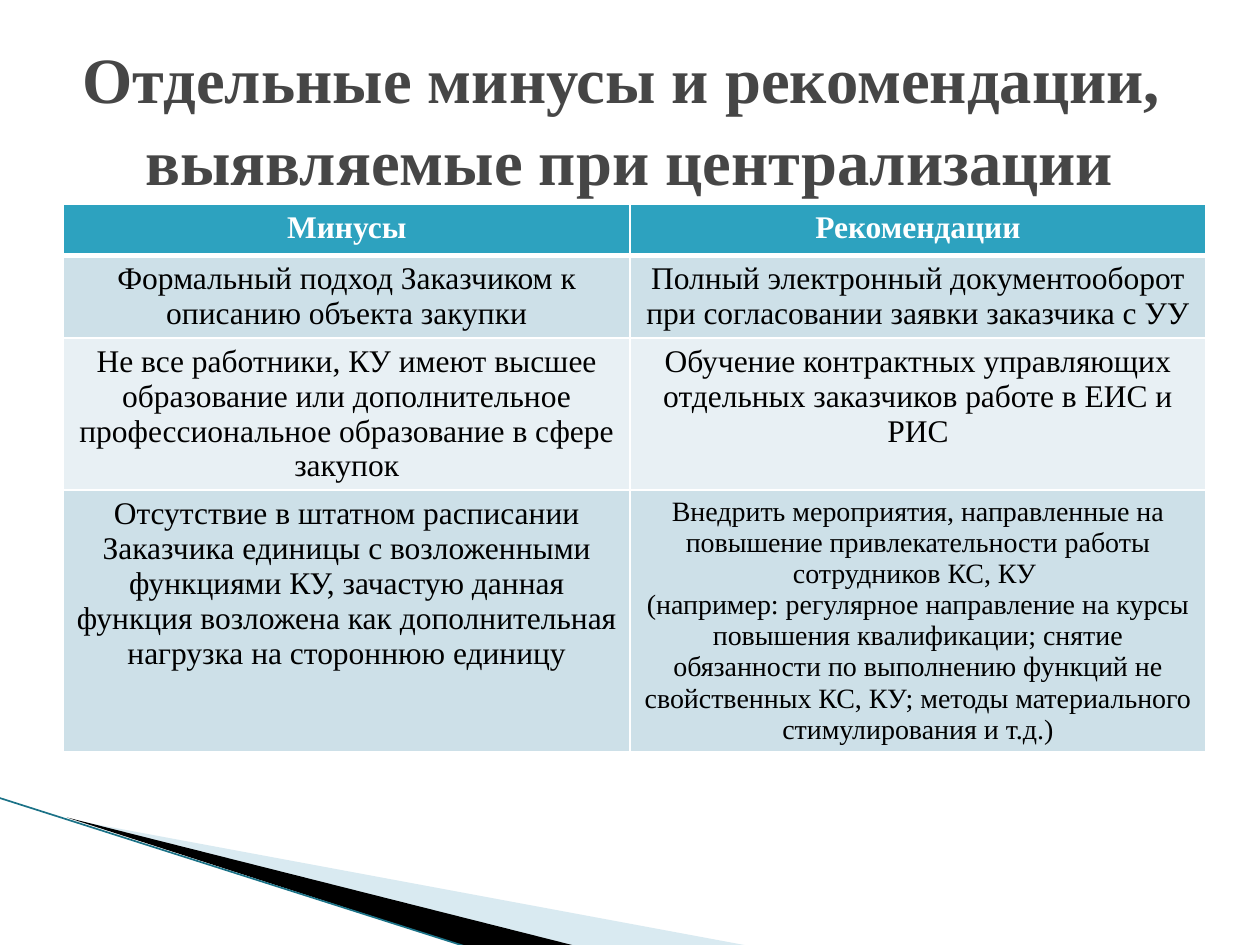
from dataclasses import dataclass

from lxml import etree
from pptx import Presentation
from pptx.dml.color import RGBColor
from pptx.enum.shapes import MSO_CONNECTOR
from pptx.enum.text import MSO_ANCHOR, PP_ALIGN
from pptx.oxml.ns import qn
from pptx.util import Cm, Pt

CENTER = PP_ALIGN.CENTER
MIDDLE = MSO_ANCHOR.MIDDLE
STRAIGHT = MSO_CONNECTOR.STRAIGHT

FONT = "Times New Roman"
COLORS = {
    "title": "464646",
    "header": "2DA2BF",
    "odd_row": "CDE0E8",
    "even_row": "E8F0F4",
    "white": "FFFFFF",
    "black": "000000",
    "wedge": "A0CBDC",
    "edge": "1B7287",
}


@dataclass
class Wedge:
    points: list[tuple[float, float]]
    color: str
    opacity: int = 100


@dataclass
class TextStyle:
    size: float
    color: str
    bold: bool = False


@dataclass
class Row:
    height: float
    fill: str
    texts: tuple[str, str]
    styles: tuple[TextStyle, TextStyle]


TITLE = TextStyle(36.9, "title", True)
HEADER = TextStyle(18, "white", True)
BODY = TextStyle(18, "black")
SMALL = TextStyle(16, "black")

WEDGES = [
    Wedge([(1.4, 16.52), (15.11, 19.07), (11.58, 19.07)], "wedge", 40),
    Wedge([(1.35, 16.48), (11.61, 19.07), (9.45, 19.1)], "black"),
]

COLUMN_WIDTHS = (11.42, 11.61)
ROWS = [
    Row(1.03, "header", ("Минусы", "Рекомендации"), (HEADER, HEADER)),
    Row(1.65, "odd_row", (
        "Формальный подход Заказчиком к описанию объекта закупки",
        "Полный электронный документооборот при согласовании заявки заказчика с УУ",
    ), (BODY, BODY)),
    Row(3.07, "even_row", (
        "Не все работники, КУ имеют высшее образование или дополнительное "
        "профессиональное образование в сфере закупок",
        "Обучение контрактных управляющих отдельных заказчиков работе в ЕИС и РИС",
    ), (BODY, BODY)),
    Row(5.26, "odd_row", (
        "Отсутствие в штатном расписании Заказчика единицы с возложенными функциями КУ, "
        "зачастую данная функция возложена как дополнительная нагрузка на стороннюю единицу",
        "Внедрить мероприятия, направленные на повышение привлекательности работы "
        "сотрудников КС, КУ \n(например: регулярное направление на курсы повышения "
        "квалификации; снятие обязанности по выполнению функций не свойственных КС, КУ; "
        "методы материального стимулирования и т.д.)",
    ), (BODY, SMALL)),
]


def rgb(name: str) -> RGBColor:
    return RGBColor.from_string(COLORS[name])


def write_text(para, text: str, style: TextStyle) -> None:
    """Fill a centred paragraph, turning each newline into a line break."""
    para.alignment = CENTER
    for index, line in enumerate(text.split("\n")):
        if index:
            para.add_line_break()
        span = para.add_run()
        span.text = line
        span.font.name = FONT
        span.font.size = Pt(style.size)
        span.font.bold = style.bold
        span.font.color.rgb = rgb(style.color)


def draw_wedge(page, wedge: Wedge) -> None:
    points = [(Cm(x), Cm(y)) for x, y in wedge.points]
    builder = page.shapes.build_freeform(*points[0], scale=1.0)
    builder.add_line_segments(points[1:], close=True)
    shape = builder.convert_to_shape()
    shape.shadow.inherit = False
    shape.line.fill.background()
    shape.fill.solid()
    shape.fill.fore_color.rgb = rgb(wedge.color)
    if wedge.opacity < 100:
        color = shape.fill._xPr.find(qn("a:solidFill"))[0]
        etree.SubElement(color, qn("a:alpha"), val=str(wedge.opacity * 1000))


def draw_edge(page) -> None:
    edge = page.shapes.add_connector(STRAIGHT, Cm(-0.03), Cm(16.08), Cm(9.45), Cm(19.1))
    edge.line.color.rgb = rgb("edge")
    edge.line.width = Pt(0.95)
    etree.SubElement(edge._element.spPr, qn("a:effectLst"))


def set_borders(cell, top: float, bottom: float) -> None:
    properties = cell._tc.get_or_add_tcPr()
    widths = {"a:lnL": 1, "a:lnR": 1, "a:lnT": top, "a:lnB": bottom}
    for tag, width in widths.items():
        line = etree.SubElement(properties, qn(tag), w=str(Pt(width)))
        fill = etree.SubElement(line, qn("a:solidFill"))
        etree.SubElement(fill, qn("a:srgbClr"), val=COLORS["white"])


def draw_table(page) -> None:
    frame = page.shapes.add_table(
        len(ROWS), len(COLUMN_WIDTHS), Cm(1.28), Cm(4.12),
        Cm(sum(COLUMN_WIDTHS)), Cm(sum(row.height for row in ROWS)),
    )
    table = frame.table
    for column, width in zip(table.columns, COLUMN_WIDTHS):
        column.width = Cm(width)
    for r, row in enumerate(ROWS):
        table.rows[r].height = Cm(row.height)
        for c, (text, style) in enumerate(zip(row.texts, row.styles)):
            cell = table.cell(r, c)
            set_borders(cell, top=3 if r == 1 else 1, bottom=3 if r == 0 else 1)
            cell.fill.solid()
            cell.fill.fore_color.rgb = rgb(row.fill)
            write_text(cell.text_frame.paragraphs[0], text, style)


def draw_title(page) -> None:
    box = page.shapes.add_textbox(Cm(1.27), Cm(0.76), Cm(22.86), Cm(3.18))
    frame = box.text_frame
    frame.word_wrap = True
    frame.vertical_anchor = MIDDLE
    para = frame.paragraphs[0]
    para.line_spacing = 1.06
    write_text(para, "Отдельные минусы и рекомендации, \nвыявляемые при централизации", TITLE)


def main() -> None:
    deck = Presentation()
    deck.slide_width, deck.slide_height = Cm(25.4), Cm(19.05)
    page = deck.slides.add_slide(deck.slide_layouts[6])
    for wedge in WEDGES:
        draw_wedge(page, wedge)
    draw_edge(page)
    draw_table(page)
    draw_title(page)
    deck.save("out.pptx")


if __name__ == "__main__":
    main()
